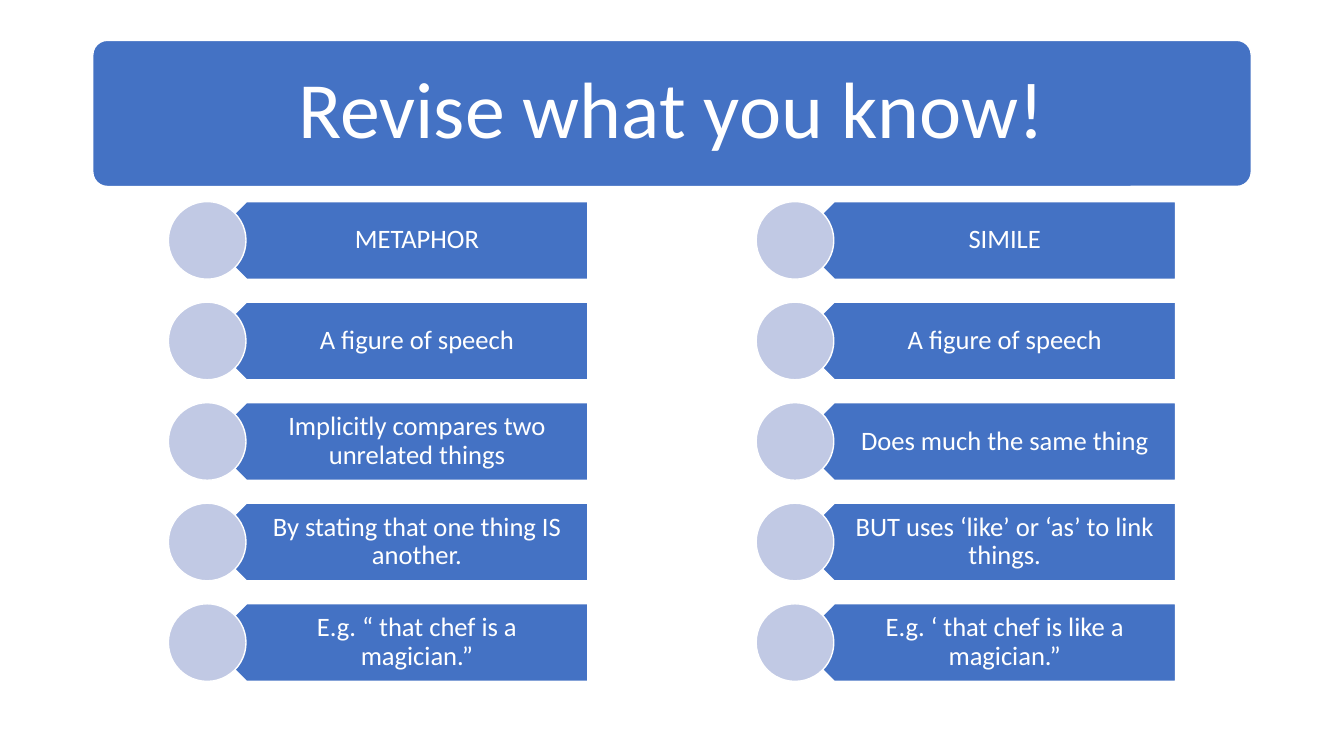
from dataclasses import dataclass

from pptx import Presentation
from pptx.dml.color import RGBColor
from pptx.enum.shapes import MSO_SHAPE
from pptx.enum.text import MSO_ANCHOR, MSO_AUTO_SIZE, PP_ALIGN
from pptx.shapes.autoshape import Shape
from pptx.slide import Slide
from pptx.util import Inches, Pt

ROUNDED, PENTAGON, OVAL = MSO_SHAPE.ROUNDED_RECTANGLE, MSO_SHAPE.PENTAGON, MSO_SHAPE.OVAL
CENTER, MIDDLE, NO_AUTOFIT = PP_ALIGN.CENTER, MSO_ANCHOR.MIDDLE, MSO_AUTO_SIZE.NONE
TITLE_ONLY = 5

COLORS = {"blue": "4472C4", "pale": "C1C9E4", "white": "FFFFFF"}
FONT = "Calibri"

FIRST_TOP, LAST_TOP = 2.0, 5.99
ROW_HEIGHT = 0.77
PLATE_OFFSET, PLATE_WIDTH = 0.39, 3.77
LABEL_OFFSET, LABEL_WIDTH = 0.58, 3.58
TITLE_INSETS = (0.24, 0.24, 0.24, 0.24)
LABEL_INSETS = (0.34, 0.08, 0.15, 0.08)


@dataclass(frozen=True)
class Box:
    left: float
    top: float
    width: float
    height: float

    def lengths(self) -> tuple[int, ...]:
        return tuple(Inches(n) for n in (self.left, self.top, self.width, self.height))


@dataclass(frozen=True)
class Column:
    left: float
    labels: tuple[str, ...]


COLUMNS = (
    Column(1.67, (
        "METAPHOR",
        "A figure of speech",
        "Implicitly compares two unrelated things",
        "By stating that one thing IS another.",
        "E.g. “ that chef is a magician.”",
    )),
    Column(7.5, (
        "SIMILE",
        "A figure of speech",
        "Does much the same thing",
        "BUT uses ‘like’ or ‘as’ to link things.",
        "E.g. ‘ that chef is like a magician.”",
    )),
)


def add_block(slide: Slide, kind: MSO_SHAPE, box: Box, color: str) -> Shape:
    """Draw a filled shape with a thin white outline."""
    shape = slide.shapes.add_shape(kind, *box.lengths())
    shape.shadow.inherit = False
    shape.fill.solid()
    shape.fill.fore_color.rgb = RGBColor.from_string(COLORS[color])
    shape.line.color.rgb = RGBColor.from_string(COLORS["white"])
    shape.line.width = Pt(1)
    return shape


def write_text(shape: Shape, text: str, *, size: float, insets: tuple[float, ...],
               color: str = "white") -> None:
    frame = shape.text_frame
    frame.auto_size = NO_AUTOFIT
    frame.word_wrap = True
    frame.vertical_anchor = MIDDLE
    (frame.margin_left, frame.margin_top,
     frame.margin_right, frame.margin_bottom) = (Inches(n) for n in insets)
    paragraph = frame.paragraphs[0]
    paragraph.alignment = CENTER
    paragraph.line_spacing = 0.9
    run = paragraph.add_run()
    run.text = text
    run.font.name = FONT
    run.font.size = Pt(size)
    run.font.color.rgb = RGBColor.from_string(COLORS[color])


def add_title(slide: Slide, text: str) -> None:
    banner = add_block(slide, ROUNDED, Box(0.92, 0.4, 11.49, 1.45), "blue")
    banner.adjustments[0] = 0.1
    title = slide.shapes.title
    title.left, title.top, title.width, title.height = Box(0.96, 0.44, 11.4, 1.36).lengths()
    write_text(title, text, size=57, insets=TITLE_INSETS)
    banner._element.addnext(title._element)  # bring the title in front of its banner


def add_row(slide: Slide, left: float, top: float, text: str) -> None:
    plate = add_block(slide, PENTAGON,
                      Box(left + PLATE_OFFSET, top, PLATE_WIDTH, ROW_HEIGHT), "blue")
    plate.rotation = 180
    label_box = Box(left + LABEL_OFFSET, top, LABEL_WIDTH, ROW_HEIGHT)
    label = slide.shapes.add_textbox(*label_box.lengths())
    write_text(label, text, size=19, insets=LABEL_INSETS)
    add_block(slide, OVAL, Box(left, top, ROW_HEIGHT, ROW_HEIGHT), "pale")


def add_column(slide: Slide, column: Column) -> None:
    pitch = (LAST_TOP - FIRST_TOP) / (len(column.labels) - 1)
    for row, text in enumerate(column.labels):
        add_row(slide, column.left, FIRST_TOP + row * pitch, text)


def main() -> None:
    presentation = Presentation()
    presentation.slide_width = Inches(13.33)
    presentation.slide_height = Inches(7.5)
    slide = presentation.slides.add_slide(presentation.slide_layouts[TITLE_ONLY])
    add_title(slide, "Revise what you know!")
    for column in COLUMNS:
        add_column(slide, column)
    presentation.save("out.pptx")


if __name__ == "__main__":
    main()
